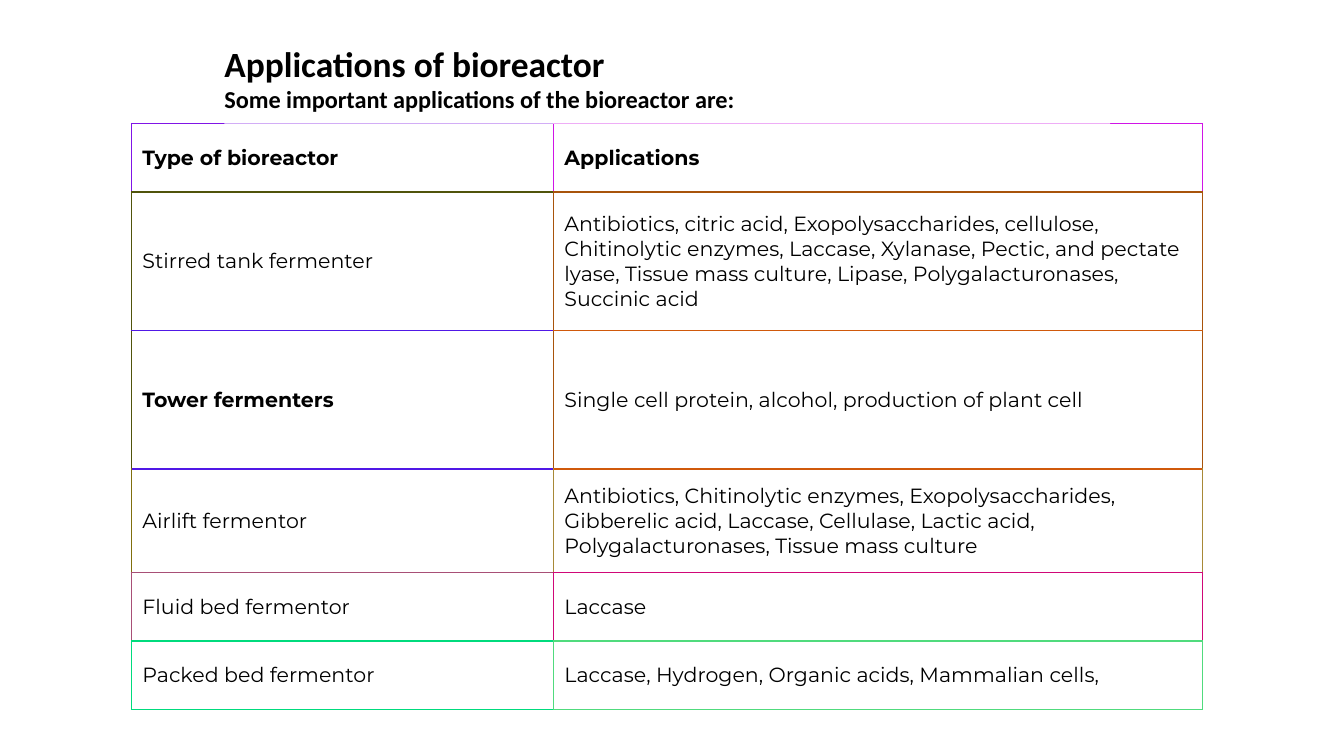
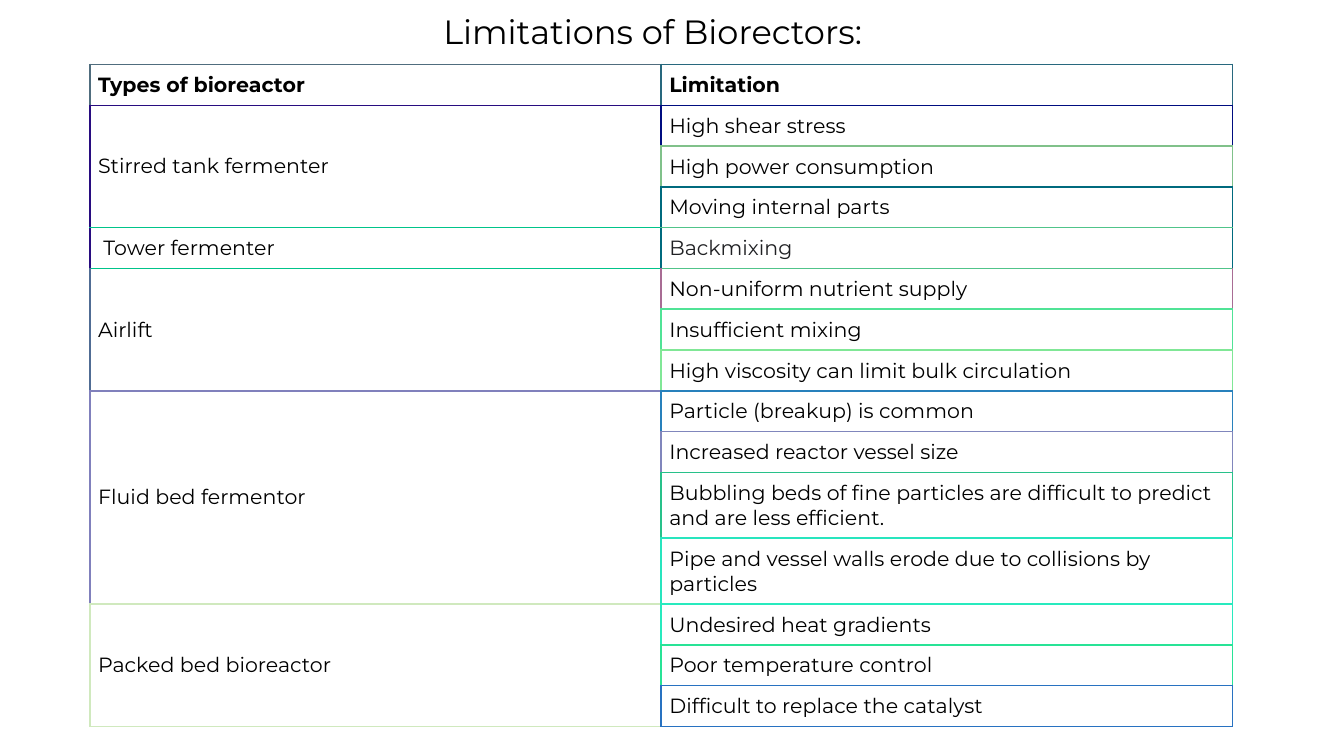
from pptx import Presentation
from pptx.dml.color import RGBColor
from pptx.enum.shapes import MSO_SHAPE as Preset
from pptx.enum.text import MSO_ANCHOR as Anchor, MSO_AUTO_SIZE as AutoSize, PP_ALIGN as Align
from pptx.oxml.ns import qn
from pptx.util import Inches, Pt
from lxml.etree import SubElement

BLACK, WHITE, CHARCOAL = "000000", "FFFFFF", "202124"
TABLE_FONT, HEADING_FONT = "Montserrat", "Calibri"
TABLE_SIZE = 11
INNER_LINE, OUTER_LINE = 1, 0.75

APPLICATIONS = {
    "at": (0.98, 0.92),
    "columns": (3.14, 4.83),
    "rows": (0.51, 1.03, 1.03, 0.77, 0.51, 0.51),
    "inset": 0.08,
    "bold": {"Type of bioreactor", "Applications", "Tower fermenters"},
    "groups": [
        (("Type of bioreactor", "8015E6", "8015E6"),
         [("Applications", "D015E6", "D015E6")]),
        (("Stirred tank fermenter", "50540B", "50540B"),
         [("Antibiotics, citric acid, Exopolysaccharides, cellulose, Chitinolytic enzymes, "
           "Laccase, Xylanase, Pectic, and pectate lyase, Tissue mass culture, Lipase, "
           "Polygalacturonases, Succinic acid", "A8540B", "A8540B")]),
        (("Tower fermenters", "50540B", "5018E6"),
         [("Single cell protein, alcohol, production of plant cell", "A8540B", "D0590B")]),
        (("Airlift fermentor", "806F0D", "5018E6"),
         [("Antibiotics, Chitinolytic enzymes, Exopolysaccharides, Gibberelic acid, Laccase, "
           "Cellulase, Lactic acid, Polygalacturonases, Tissue mass culture", "A88937", "D0590B")]),
        (("Fluid bed fermentor", "A84F76", "A84F76"),
         [("Laccase", "D00878", "D00878")]),
        (("Packed bed fermentor", "00DB7D", "00DB7D"),
         [("Laccase, Hydrogen, Organic acids, Mammalian cells,", "50DB7D", "50DB7D")]),
    ],
}

LIMITATIONS = {
    "at": (0.67, 0.48),
    "columns": (4.25, 4.25),
    "rows": (0.3,) * 10 + (0.49,) * 2 + (0.3,) * 3,
    "inset": 0.06,
    "bold": {"Types of bioreactor", "Limitation"},
    "groups": [
        (("Types of bioreactor", "506D7E", "506D7E"),
         [("Limitation", "28687E", "28687E")]),
        (("Stirred tank fermenter", "280C80", "280C80"),
         [("High shear stress", "000D80", "000D80"),
          ("High power consumption", "80C18A", "80C18A"),
          ("Moving internal parts", "006A7E", "006A7E")]),
        ((" Tower fermenter", "280C80", "00C48A"),
         [("Backmixing", "006A7E", "50C48A")]),
        (("Airlift", "506C94", "00C48A"),
         [("Non-uniform nutrient supply", "A86C94", "50C48A"),
          ("Insufficient mixing", "50E396", "50E396"),
          ("High viscosity can limit bulk circulation", "80E796", "80E796")]),
        (("Fluid bed fermentor", "8080BC", "8080BC"),
         [("Particle (breakup) is common", "2881BC", "2881BC"),
          ("Increased reactor vessel size", "8086BC", "8086BC"),
          ("Bubbling beds of fine particles are difficult to predict and are less efficient.",
           "28C18A", "28C18A"),
          ("Pipe and vessel walls erode due to collisions by particles", "28E5BE", "28E5BE")]),
        (("Packed bed bioreactor", "D0E9BE", "D0E9BE"),
         [("Undesired heat gradients", "28EABE", "28EABE"),
          ("Poor temperature control", "28E396", "28E396"),
          ("Difficult to replace the catalyst", "2872C1", "2872C1")]),
    ],
}
TEXT_COLOURS = {"Backmixing": CHARCOAL}

APPLICATIONS_HEADING = [("Applications of bioreactor", 19),
                        ("Some important applications of the bioreactor are:", 13)]
LIMITATIONS_HEADING = ("Limitations of Biorectors:", 18)


def colour(code):
    return RGBColor.from_string(code)


def fill(target, code):
    target.fill.solid()
    target.fill.fore_color.rgb = colour(code)


def add_run(paragraph, text, font, size, bold=False, code=BLACK):
    paragraph.alignment = Align.LEFT
    run = paragraph.add_run()
    run.text = text
    run.font.name, run.font.size, run.font.bold = font, Pt(size), bold
    run.font.color.rgb = colour(code)


def set_borders(cell, borders):
    properties = cell._tc.get_or_add_tcPr()
    for side, (code, width) in zip("LRTB", borders):
        line = SubElement(properties, qn(f"a:ln{side}"), w=str(Pt(width)))
        SubElement(SubElement(line, qn("a:solidFill")), qn("a:srgbClr"), val=code)
        SubElement(line, qn("a:prstDash"), val="solid")


def fill_cell(cell, entry, right, below, content):
    text, side, top = entry
    bottom = (below[2], INNER_LINE) if below else (top, OUTER_LINE)
    set_borders(cell, [(side, INNER_LINE), right, (top, INNER_LINE), bottom])
    fill(cell, WHITE)
    cell.vertical_anchor = Anchor.MIDDLE
    cell.margin_left = cell.margin_right = Inches(content["inset"])
    cell.margin_top = cell.margin_bottom = Inches(content["inset"])
    add_run(cell.text_frame.paragraphs[0], text, TABLE_FONT, TABLE_SIZE,
            text in content["bold"], TEXT_COLOURS.get(text, BLACK))


def add_bioreactor_table(slide, content):
    columns, rows, groups = content["columns"], content["rows"], content["groups"]
    frame = (*content["at"], sum(columns), sum(rows))
    table = slide.shapes.add_table(len(rows), len(columns), *map(Inches, frame)).table
    table.first_row = table.horz_banding = False
    for column, width in zip(table.columns, columns):
        column.width = Inches(width)
    for row, height in zip(table.rows, rows):
        row.height = Inches(height)

    types = [kind for kind, _ in groups] + [None]
    details = [entry for _, entries in groups for entry in entries] + [None]
    row = 0
    for index, (kind, entries) in enumerate(groups):
        type_cell = table.cell(row, 0)
        if len(entries) > 1:
            type_cell.merge(table.cell(row + len(entries) - 1, 0))
        fill_cell(type_cell, kind, (entries[0][1], INNER_LINE), types[index + 1], content)
        for entry in entries:
            fill_cell(table.cell(row, 1), entry, (entry[1], OUTER_LINE), details[row + 1], content)
            row += 1


def add_applications_heading(slide):
    heading = slide.shapes.add_shape(Preset.RECTANGLE, *map(Inches, (1.67, 0.31, 6.59, 0.61)))
    heading.shadow.inherit = False
    fill(heading, WHITE)
    heading.line.fill.background()
    frame = heading.text_frame
    frame.word_wrap = True
    frame.auto_size = AutoSize.SHAPE_TO_FIT_TEXT
    frame.vertical_anchor = Anchor.MIDDLE
    frame.margin_left = frame.margin_right = frame.margin_top = 0
    frame.margin_bottom = Inches(0.07)
    for index, (text, size) in enumerate(APPLICATIONS_HEADING):
        paragraph = frame.add_paragraph() if index else frame.paragraphs[0]
        add_run(paragraph, text, HEADING_FONT, size, bold=True)


def add_limitations_heading(slide):
    frame = slide.shapes.add_textbox(*map(Inches, (3.2, 0.03, 3.74, 0.4))).text_frame
    frame.word_wrap = False
    frame.auto_size = AutoSize.SHAPE_TO_FIT_TEXT
    text, size = LIMITATIONS_HEADING
    add_run(frame.paragraphs[0], text, TABLE_FONT, size)


def main():
    deck = Presentation()
    deck.slide_width = Inches(10)
    deck.slide_height = Inches(10 * 9 / 16)
    for content, add_heading in ((APPLICATIONS, add_applications_heading),
                                 (LIMITATIONS, add_limitations_heading)):
        slide = deck.slides.add_slide(deck.slide_layouts[6])
        fill(slide.background, WHITE)
        add_bioreactor_table(slide, content)
        add_heading(slide)
    deck.save("out.pptx")


if __name__ == "__main__":
    main()
